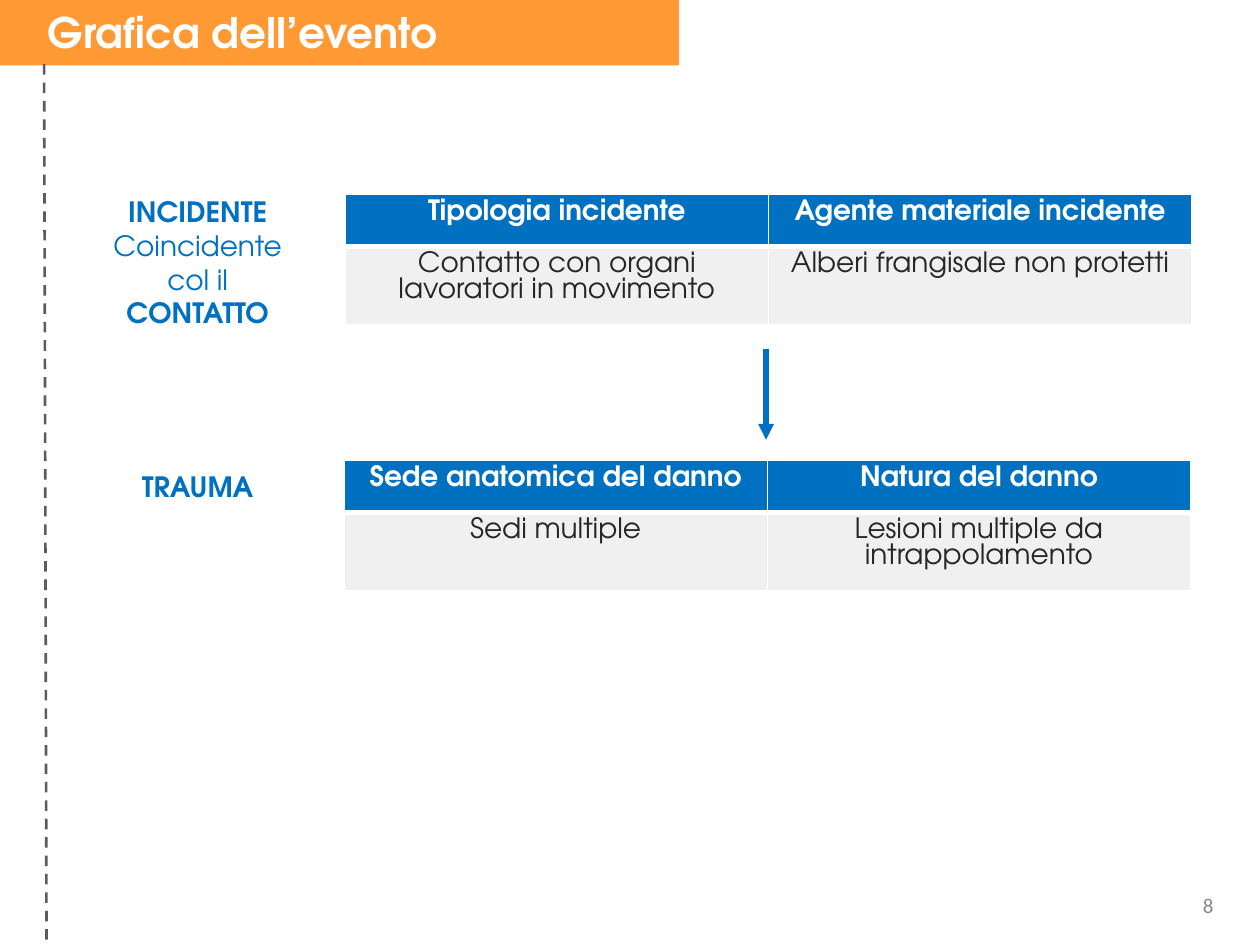
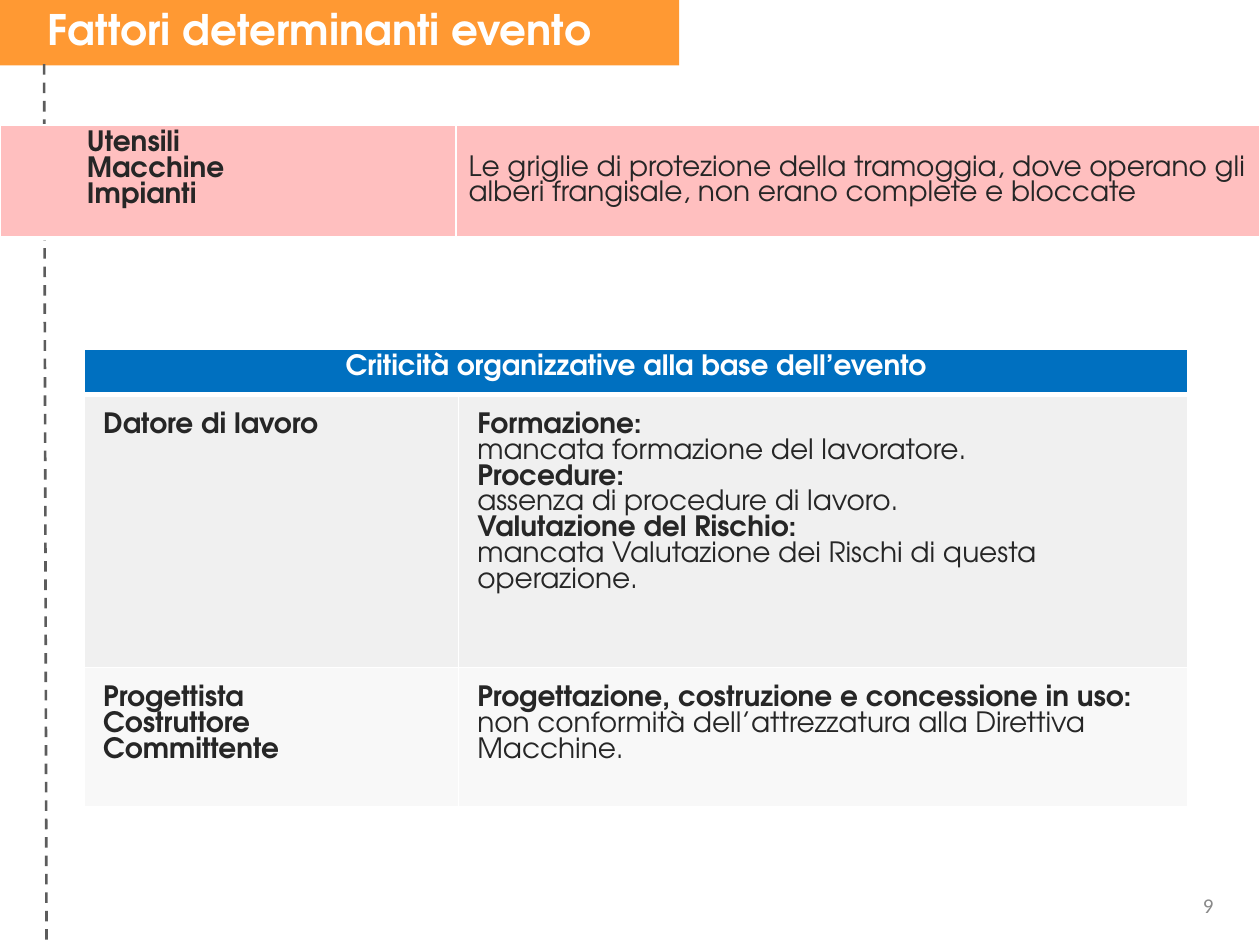
from lxml import etree
from pptx import Presentation
from pptx.dml.color import RGBColor
from pptx.enum.dml import MSO_LINE
from pptx.enum.shapes import MSO_CONNECTOR, MSO_SHAPE
from pptx.enum.text import MSO_ANCHOR, MSO_AUTO_SIZE, PP_ALIGN
from pptx.oxml.ns import qn
from pptx.util import Pt

ORANGE = RGBColor(0xFF, 0x99, 0x33)
BLUE = RGBColor(0x00, 0x70, 0xC0)
WHITE = RGBColor(0xFF, 0xFF, 0xFF)
DARK = RGBColor(0x26, 0x26, 0x26)
SMOKE = RGBColor(0xF0, 0xF0, 0xF0)
PALE = RGBColor(0xF8, 0xF8, 0xF8)
PINK = RGBColor(0xFF, 0xBF, 0xBF)
DASHED = RGBColor(0x5C, 0x5C, 0x5C)
GREY = RGBColor(0x89, 0x89, 0x89)

LEFT, CENTER, RIGHT = PP_ALIGN.LEFT, PP_ALIGN.CENTER, PP_ALIGN.RIGHT
TOP, MIDDLE = MSO_ANCHOR.TOP, MSO_ANCHOR.MIDDLE
NOFIT = MSO_AUTO_SIZE.NONE
STRAIGHT = MSO_CONNECTOR.STRAIGHT
RECT = MSO_SHAPE.RECTANGLE
DASH = MSO_LINE.DASH

FACE = "TeX Gyre Adventor"
PITCH = Pt(14.7)
SIDES = ("lnL", "lnR", "lnT", "lnB")
INSET = ("margin_left", "margin_right", "margin_top", "margin_bottom")


def apply(item, values):
    for name, value in values.items():
        setattr(item, name, value)


def place(shape, left, top, width, height):
    apply(shape, {"left": Pt(left), "top": Pt(top),
                  "width": Pt(width), "height": Pt(height)})


def write(frame, paras, color, size=16, face=FACE, align=LEFT,
          pitch=None, indent=0):
    for i, runs in enumerate(paras):
        para = frame.add_paragraph() if i else frame.paragraphs[0]
        apply(para, {"alignment": align, "line_spacing": pitch,
                     "space_before": Pt(0)})
        if indent:
            props = para._p.get_or_add_pPr()
            props.set("marL", str(Pt(indent)))
            props.set("indent", "0")
        for text, bold in runs:
            run = para.add_run()
            run.text = text
            apply(run.font, {"size": Pt(size), "name": face, "bold": bold})
            run.font.color.rgb = color


def bold(*lines):
    return [[(line, True)] for line in lines]


def plain(*lines):
    return [[(line, False)] for line in lines]


def add_line(slide, x1, y1, x2, y2, color, width):
    line = slide.shapes.add_connector(STRAIGHT, Pt(x1), Pt(y1), Pt(x2), Pt(y2))
    line.line.color.rgb = color
    line.line.width = Pt(width)
    etree.SubElement(line.element.spPr, qn("a:effectLst"))
    return line


def add_arrow(slide, x, top, end):
    arrow = add_line(slide, x, top, x, end, BLUE, 3)
    tail = etree.SubElement(arrow.line._get_or_add_ln(), qn("a:tailEnd"))
    tail.set("type", "triangle")


def add_text(slide, box, paras, color, anchor=TOP, **style):
    shape = slide.shapes.add_textbox(*map(Pt, box))
    apply(shape.text_frame, {"word_wrap": True, "vertical_anchor": anchor})
    write(shape.text_frame, paras, color, **style)


def add_label(slide, top, paras):
    add_text(slide, (48.2, top, 129.6, 28.8), paras, BLUE, MIDDLE,
             align=CENTER)


def add_grid(slide, left, top, cols, rows):
    shape = slide.shapes.add_table(len(rows), len(cols), Pt(left), Pt(top),
                                   Pt(sum(cols)), Pt(sum(rows)))
    table = shape.table
    apply(table, {"first_row": False, "horz_banding": False})
    for col, width in zip(table.columns, cols):
        col.width = Pt(width)
    for row, height in zip(table.rows, rows):
        row.height = Pt(height)
    return table


def fill_cell(cell, paras, fill, color=DARK, base=1, inset=None,
              anchor=TOP, **style):
    props = cell._tc.get_or_add_tcPr()
    for side in SIDES:
        edge = etree.SubElement(props, qn("a:" + side))
        edge.set("w", str(Pt(base if side == "lnB" else 1)))
        paint = etree.SubElement(edge, qn("a:solidFill"))
        etree.SubElement(paint, qn("a:srgbClr")).set("val", str(WHITE))
    cell.fill.solid()
    cell.fill.fore_color.rgb = fill
    cell.vertical_anchor = anchor
    if inset:
        apply(cell, dict.fromkeys(INSET, Pt(inset)))
    if paras:
        write(cell.text_frame, paras, color, pitch=PITCH, **style)


def fill_head(cell, paras):
    fill_cell(cell, paras, BLUE, WHITE, base=3, align=CENTER)


def add_pair(slide, left, top, heads, facts):
    table = add_grid(slide, left, top, (241.9, 241.9), (29.9, 45))
    for col, (head, fact) in enumerate(zip(heads, facts)):
        fill_head(table.cell(0, col), bold(head))
        fill_cell(table.cell(1, col), plain(fact), SMOKE, align=CENTER)


def add_page(deck, name, number, top=0):
    slide = deck.slides.add_slide(deck.slide_layouts[5])
    band = slide.shapes.add_shape(RECT, Pt(-8.6), Pt(0), Pt(396.7), Pt(37.4))
    band.shadow.inherit = False
    band.fill.solid()
    band.fill.fore_color.rgb = ORANGE
    band.line.fill.background()
    add_line(slide, 25.2, 36.7, 26.6, 540, DASHED, 1.5).line.dash_style = DASH
    add_text(slide, (660.2, 506.2, 40.3, 30.2), plain(number), GREY,
             size=12, face="Calibri", align=RIGHT)
    title = slide.shapes.title
    slide.shapes.element.append(title.element)
    place(title, 20.2, top, 563.8, 36)
    apply(title.text_frame, {"auto_size": NOFIT, "vertical_anchor": TOP,
                             "word_wrap": True})
    write(title.text_frame, bold(name), WHITE, size=24)
    return slide


def draw_event(deck):
    slide = add_page(deck, "Grafica dell’evento", "8")
    add_pair(slide, 196.6, 262.8,
             ("Sede anatomica del danno", "Natura del danno"),
             ("Sedi multiple", "Lesioni multiple da intrappolamento"))
    add_label(slide, 135.4, bold("INCIDENTE") + [
        [("Coincidente col il ", False), ("CONTATTO", True)]])
    add_label(slide, 263.5, bold("TRAUMA"))
    add_arrow(slide, 437.8, 199.4, 251.3)
    add_pair(slide, 197.3, 110.9,
             ("Tipologia incidente", "Agente materiale incidente"),
             ("Contatto con organi lavoratori in movimento",
              "Alberi frangisale non protetti"))


def draw_causes(deck):
    slide = add_page(deck, "Fattori determinanti evento", "9", -1.4)
    table = add_grid(slide, 48.2, 199.4, (213.8, 416.9), (26, 156, 79.4))
    table.cell(0, 0).merge(table.cell(0, 1))
    fill_head(table.cell(0, 0),
              bold("Criticità organizzative alla base dell’evento"))
    fill_head(table.cell(0, 1), [])
    faults = (
        (SMOKE, bold("Datore di lavoro"),
         bold("Formazione:") + plain("mancata formazione del lavoratore.")
         + bold("Procedure:") + plain("assenza di procedure di lavoro.")
         + bold("Valutazione del Rischio:")
         + plain("mancata Valutazione dei Rischi di questa operazione.")),
        (PALE, bold("Progettista", "Costruttore", "Committente"),
         bold("Progettazione, costruzione e concessione in uso:")
         + plain("non conformità dell’attrezzatura alla Direttiva Macchine.")),
    )
    for row, (fill, *texts) in enumerate(faults, 1):
        for col, paras in enumerate(texts):
            fill_cell(table.cell(row, col), paras, fill, inset=10.8)
    tools = add_grid(slide, 0, 71.3, (260.6, 459.4), (64.8,))
    fill_cell(tools.cell(0, 0), bold("Utensili", "Macchine", "Impianti"),
              PINK, base=3, indent=42.5)
    fill_cell(tools.cell(0, 1), plain(
        "Le griglie di protezione della tramoggia, dove operano gli "
        "alberi frangisale, non erano complete e bloccate"),
        PINK, base=3, anchor=MIDDLE)


def main():
    deck = Presentation()
    apply(deck, {"slide_width": Pt(720), "slide_height": Pt(540)})
    draw_event(deck)
    draw_causes(deck)
    deck.save("out.pptx")


if __name__ == "__main__":
    main()
